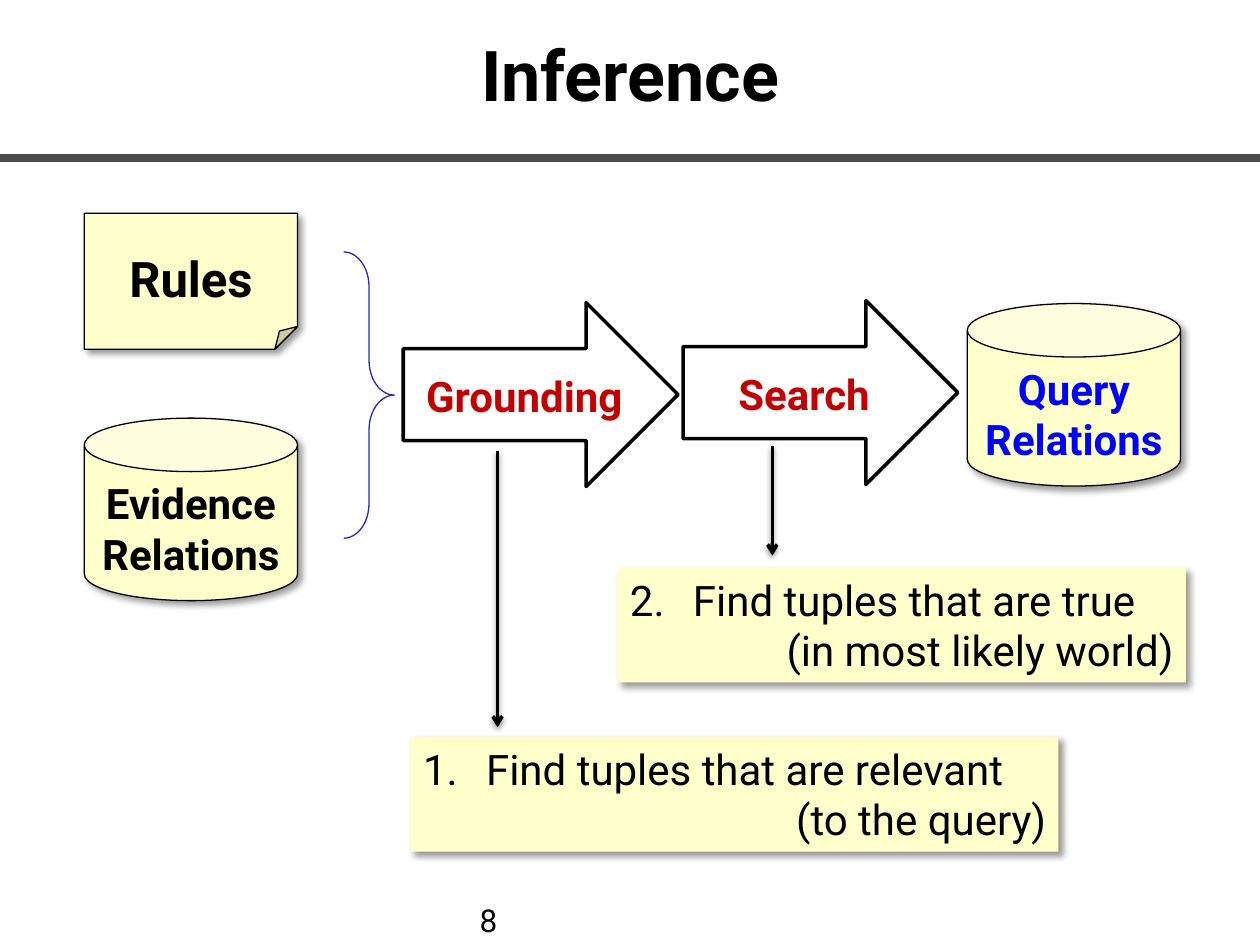
from lxml.etree import SubElement
from pptx import Presentation
from pptx.dml.color import RGBColor
from pptx.enum.shapes import MSO_CONNECTOR, MSO_SHAPE
from pptx.enum.text import MSO_ANCHOR, PP_ALIGN
from pptx.oxml.ns import qn
from pptx.util import Cm, Pt

BLACK = RGBColor(0x00, 0x00, 0x00)
WHITE = RGBColor(0xFF, 0xFF, 0xFF)
GRAY = RGBColor(0x4D, 0x4D, 0x4D)
CREAM = RGBColor(0xFF, 0xFF, 0xCC)
RED = RGBColor(0xC0, 0x00, 0x00)
BLUE = RGBColor(0x00, 0x00, 0xFF)
INDIGO = RGBColor(0x29, 0x29, 0xB8)

FONT = "Roboto"
SLIDE_WIDTH, SLIDE_HEIGHT = 25.4, 19.05
RULE_TOP = 3.18

# Shadows: opacity %, blur pt, distance pt, direction in degrees
BOX_SHADOW = (40, 4, 3, 45)
LINE_SHADOW = (38, 3.1, 1.6, 90)

# Content; all positions are in centimetres
TITLE = "Inference"
PAGE_NUMBER = "8"
STORE_LEFT, STORE_WIDTH = 1.7, 4.3
RULES = ("Rules", (STORE_LEFT, 4.3, STORE_WIDTH, 2.74))
DATABASES = [
    (["Evidence", "Relations"], (STORE_LEFT, 8.43, STORE_WIDTH, 3.68), BLACK),
    (["Query", "Relations"], (19.5, 6.12, STORE_WIDTH, 3.68), BLUE),
]
BRACE_BOX = (6.93, 5.08, 1.02, 5.77)
STEP_SIZE = (5.54, 3.71)
LABEL_OFFSET, LABEL_SIZE = (0.04, 1.3), (4.8, 1.17)
STEPS = [
    {"name": "Grounding", "at": (8.13, 6.1), "number": 1,
     "note": ("Find tuples that are relevant", "(to the query)"),
     "note_box": (8.28, 14.86, 13.06, 2.31), "pointer": (10.03, 9.09, 14.66)},
    {"name": "Search", "at": (13.77, 6.06), "number": 2,
     "note": ("Find tuples that are true", "(in most likely world)"),
     "note_box": (12.45, 11.45, 11.46, 2.31), "pointer": (15.57, 8.99, 11.2)},
]


def set_shadow(item, shadow=None):
    effects = SubElement(item._element.spPr, qn("a:effectLst"))
    if shadow:
        opacity, blur, distance, direction = shadow
        outer = SubElement(effects, qn("a:outerShdw"), blurRad=str(Pt(blur)),
                           dist=str(Pt(distance)), dir=str(direction * 60000),
                           algn="tl", rotWithShape="0")
        color = SubElement(outer, qn("a:srgbClr"), val=str(BLACK))
        SubElement(color, qn("a:alpha"), val=str(opacity * 1000))


def write(shape, lines, size, color=BLACK, bold=False, align=PP_ALIGN.CENTER,
          anchor=MSO_ANCHOR.TOP):
    frame = shape.text_frame
    frame.word_wrap = True
    frame.vertical_anchor = anchor
    frame.text = "\n".join(lines)
    font_format = {"name": FONT, "size": Pt(size), "bold": bold}
    for paragraph in frame.paragraphs:
        paragraph.alignment = align
        font = paragraph.runs[0].font
        font.color.rgb = color
        for name, value in font_format.items():
            setattr(font, name, value)
    return frame


def add_text(slide, box, lines, size, **text_format):
    shape = slide.shapes.add_textbox(*map(Cm, box))
    return write(shape, lines, size, anchor=MSO_ANCHOR.MIDDLE, **text_format)


def add_box(slide, kind, box, fill=None, line=None, width=0.75,
            shadow=None, adjustments=()):
    shape = slide.shapes.add_shape(kind, *map(Cm, box))
    for index, value in enumerate(adjustments):
        shape.adjustments[index] = value
    for part, color in ((shape.fill, fill), (shape.line.fill, line)):
        if color is None:
            part.background()
        else:
            part.solid()
            part.fore_color.rgb = color
    if line is not None:
        shape.line.width = Pt(width)
    set_shadow(shape, shadow)
    return shape


def add_line(slide, ends, color, width, arrow=False, shadow=None):
    connector = slide.shapes.add_connector(MSO_CONNECTOR.STRAIGHT, *map(Cm, ends))
    connector.line.color.rgb = color
    connector.line.width = Pt(width)
    if arrow:
        SubElement(connector.line._get_or_add_ln(), qn("a:tailEnd"), type="arrow")
    set_shadow(connector, shadow)


def number_paragraph(paragraph, number):
    paragraph.alignment = PP_ALIGN.LEFT
    properties = paragraph._p.get_or_add_pPr()
    indent = Cm(1.27)
    properties.set("marL", str(indent))
    properties.set("indent", str(-indent))
    SubElement(properties, qn("a:buFont"), typeface=FONT)
    SubElement(properties, qn("a:buAutoNum"), type="arabicPeriod", startAt=str(number))


def add_step(slide, step):
    # Block arrow with its label
    left, top = step["at"]
    add_box(slide, MSO_SHAPE.RIGHT_ARROW, (left, top, *STEP_SIZE), WHITE, BLACK, 2)
    label_box = (left + LABEL_OFFSET[0], top + LABEL_OFFSET[1], *LABEL_SIZE)
    add_text(slide, label_box, [step["name"]], 24, color=RED, bold=True)

    # Numbered note and the pointer down to it
    note = add_box(slide, MSO_SHAPE.RECTANGLE, step["note_box"], CREAM, shadow=BOX_SHADOW)
    frame = write(note, step["note"], 24, align=PP_ALIGN.RIGHT)
    number_paragraph(frame.paragraphs[0], step["number"])
    x, start, end = step["pointer"]
    add_line(slide, (x, start, x, end), BLACK, 2, arrow=True, shadow=LINE_SHADOW)


def main():
    presentation = Presentation()
    presentation.slide_width = Cm(SLIDE_WIDTH)
    presentation.slide_height = Cm(SLIDE_HEIGHT)
    slide = presentation.slides.add_slide(presentation.slide_layouts[6])

    # Title, rule and page number
    add_line(slide, (0, RULE_TOP, SLIDE_WIDTH, RULE_TOP), GRAY, 4.5)
    add_text(slide, (0, 0, SLIDE_WIDTH, 2.97), [TITLE], 40, bold=True)
    add_text(slide, (9.42, 18.03, 5.92, 1.02), [PAGE_NUMBER], 18, align=PP_ALIGN.LEFT)

    # Inputs and result
    name, box = RULES
    rules = add_box(slide, MSO_SHAPE.FOLDED_CORNER, box, CREAM, BLACK, shadow=BOX_SHADOW)
    write(rules, [name], 28, bold=True).margin_top = Cm(0.71)
    for lines, box, color in DATABASES:
        database = add_box(slide, MSO_SHAPE.CAN, box, CREAM, BLACK,
                           shadow=BOX_SHADOW, adjustments=[0.293])
        write(database, lines, 24, color=color, bold=True)
    add_box(slide, MSO_SHAPE.RIGHT_BRACE, BRACE_BOX, line=INDIGO,
            adjustments=[0.688, 0.5])

    # Processing steps
    for step in STEPS:
        add_step(slide, step)

    presentation.save("out.pptx")


if __name__ == "__main__":
    main()
